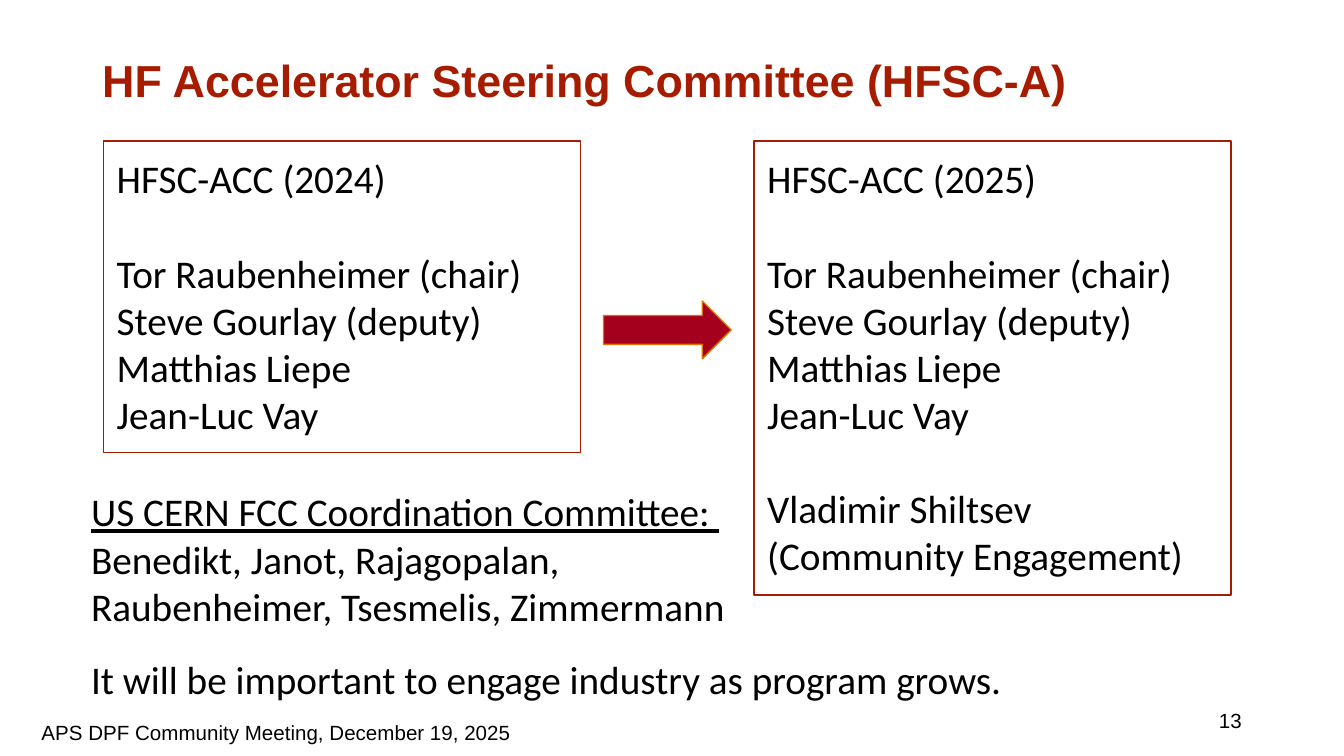
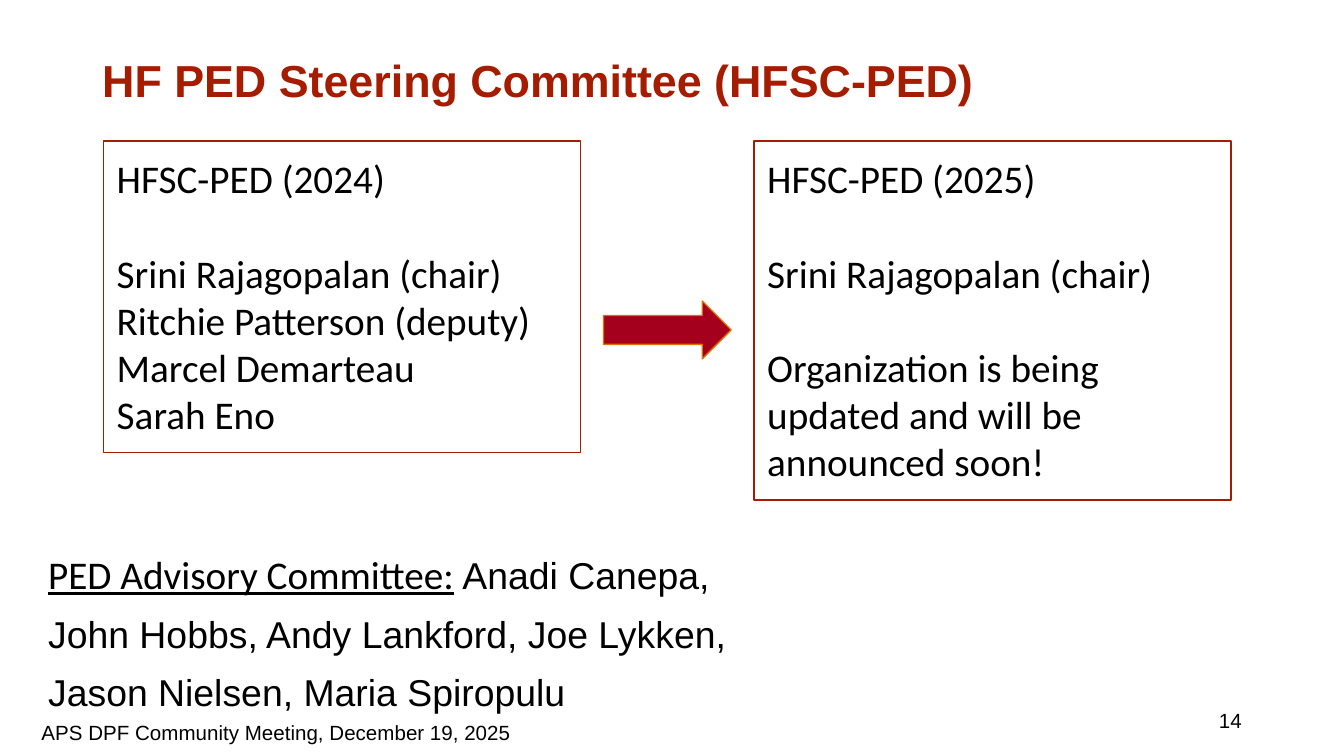
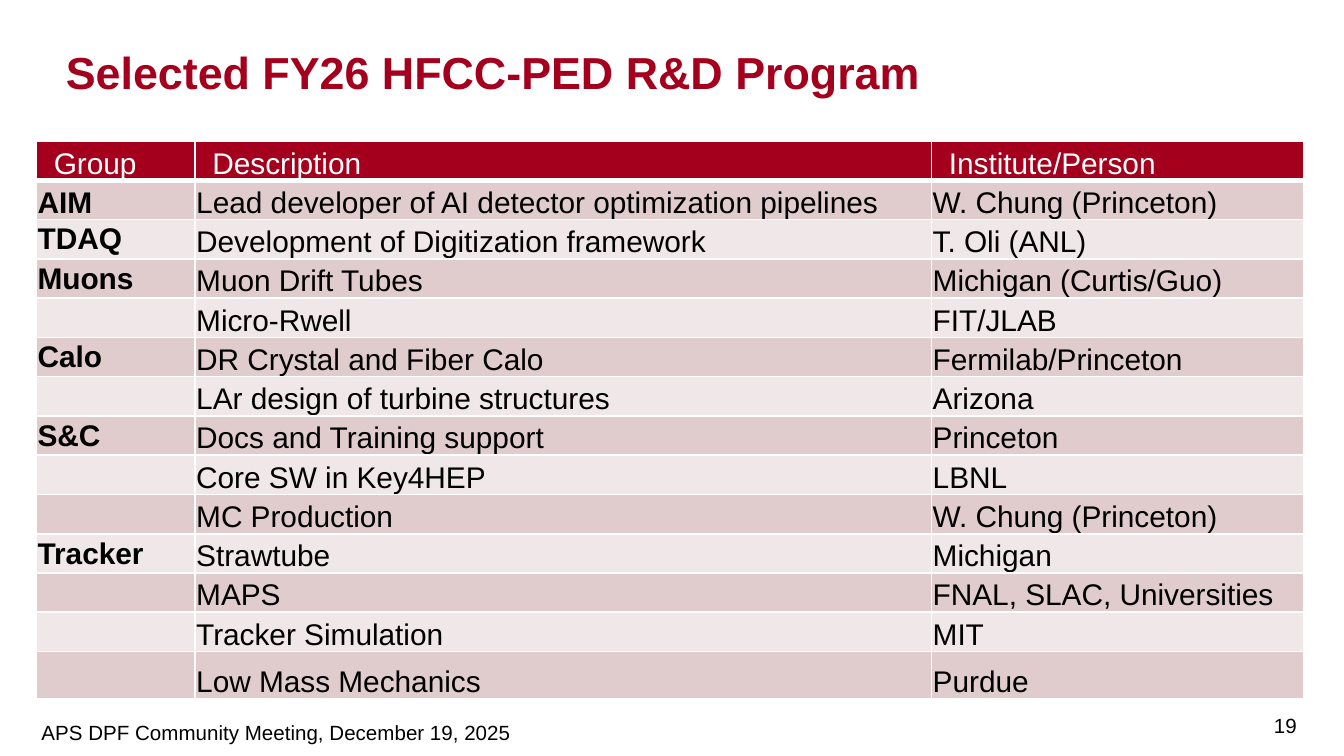
from dataclasses import dataclass

from lxml import etree
from pptx import Presentation
from pptx.dml.color import RGBColor
from pptx.enum.shapes import MSO_SHAPE
from pptx.enum.text import MSO_ANCHOR, MSO_AUTO_SIZE, PP_ALIGN
from pptx.oxml.ns import qn
from pptx.util import Emu, Inches, Pt

TOP, MIDDLE, BOTTOM = MSO_ANCHOR.TOP, MSO_ANCHOR.MIDDLE, MSO_ANCHOR.BOTTOM
LEFT, RIGHT = PP_ALIGN.LEFT, PP_ALIGN.RIGHT
RECTANGLE, RIGHT_ARROW = MSO_SHAPE.RECTANGLE, MSO_SHAPE.RIGHT_ARROW
NO_AUTOFIT = MSO_AUTO_SIZE.NONE
TITLE_ONLY = 5


@dataclass(frozen=True)
class Theme:
    brick: str = "A61C00"
    crimson: str = "A4001D"
    orange: str = "E17000"
    black: str = "000000"
    white: str = "FFFFFF"
    bands: tuple = ("E0CCCD", "F0E7E8")
    sans: str = "Arial"
    body: str = "Calibri"
    title_size: float = 24
    body_size: float = 21
    names_size: float = 20
    table_size: float = 16
    footer_size: float = 11
    line_width: float = 0.75


THEME = Theme()

# The grid has square cells, 100 columns across the slide
CELL = 0.1
LINE_ROWS = 3.53


@dataclass(frozen=True)
class Box:
    """A region in grid columns and rows."""
    left: float
    top: float
    width: float
    height: float

    def within(self, left, top, width, height):
        return Box(self.left + left, self.top + top, width, height)

    def emu(self):
        return [grid(n) for n in (self.left, self.top, self.width, self.height)]


TITLE = Box(6.9, 0.5, 86.2, 10.9)
TABLE_TITLE = Box(4.9, 1.1, 88.6, 6.2)
FOOTER = Box(2.1, 53.1, 60.2, 3.4)
NUMBER = Box(70.6, 52.1, 22.5, 3)
TABLE_NUMBER = Box(90.6, 51.8, 6.6, 4.4)
COMMITTEES = Box(7.7, 10.5, 83.9, 33.8)
TABLE = Box(2.7, 10.5, 94.3, 41.5)


def grid(cells):
    return Emu(Inches(cells * CELL))


def color(value):
    return RGBColor.from_string(value)


def style(font, name, size, ink, bold=False):
    font.name, font.size, font.bold = name, Pt(size), bold
    font.color.rgb = color(ink)


def set_frame(frame, insets=(0.1, 0.1), anchor=TOP):
    """Insets are horizontal and vertical, in inches."""
    frame.word_wrap = True
    frame.auto_size = NO_AUTOFIT
    frame.vertical_anchor = anchor
    frame.margin_left = frame.margin_right = Inches(insets[0])
    frame.margin_top = frame.margin_bottom = Inches(insets[1])


def add_text(page, box, insets=(0.1, 0.1), anchor=TOP):
    frame = page.shapes.add_textbox(*box.emu()).text_frame
    set_frame(frame, insets, anchor)
    return frame.paragraphs[0]


def add_small(page, box, text, insets, anchor=TOP, align=LEFT):
    para = add_text(page, box, insets, anchor)
    para.text, para.alignment = text, align
    style(para.font, THEME.sans, THEME.footer_size, THEME.black)


def add_page(deck, title, number, box=TITLE, ink=THEME.brick, insets=(0.07, 0.04),
             anchor=MIDDLE, number_box=NUMBER):
    """Start a slide with its title, footer and number."""
    page = deck.slides.add_slide(deck.slide_layouts[TITLE_ONLY])
    heading = page.shapes.title
    heading.left, heading.top, heading.width, heading.height = box.emu()
    set_frame(heading.text_frame, insets, anchor)
    para = heading.text_frame.paragraphs[0]
    para.text, para.alignment = title, LEFT
    style(para.font, THEME.sans, THEME.title_size, ink, bold=True)
    add_small(page, FOOTER, "APS DPF Community Meeting, December 19, 2025", (0.1, 0.05))
    add_small(page, number_box, number, (0.07, 0.04), MIDDLE, RIGHT)
    return page


def add_outline(page, preset, box, line):
    shape = page.shapes.add_shape(preset, *box.emu())
    shape.shadow.inherit = False
    shape.fill.background()
    shape.line.color.rgb = color(line)
    shape.line.width = Pt(THEME.line_width)
    return shape


def add_panel(page, box, groups):
    """Framed list; each group after the first stands one line apart."""
    frame = add_outline(page, RECTANGLE, box, THEME.brick).text_frame
    set_frame(frame)
    para = None
    for group in groups:
        for index, text in enumerate(group):
            starts_group = para is not None and index == 0
            para = frame.add_paragraph() if para is not None else frame.paragraphs[0]
            para.text, para.alignment = text, LEFT
            if starts_group:
                para.space_before = Pt(LINE_ROWS * CELL * 72)
            style(para.font, THEME.body, THEME.body_size, THEME.black)


def add_committees(page, area, before, after, after_lines):
    """Two panels, with an arrow from last year's to this year's."""
    panel, arrow = 35.5, 9.5
    before_lines = sum(map(len, before)) + len(before) - 1
    for left, groups, lines in ((0, before, before_lines),
                                (area.width - panel, after, after_lines)):
        add_panel(page, area.within(left, 0, panel, 2 + lines * LINE_ROWS), groups)
    box = area.within((area.width - arrow) / 2, 11.9, arrow, 4.3)
    shape = add_outline(page, RIGHT_ARROW, box, THEME.orange)
    shape.fill.solid()
    shape.fill.fore_color.rgb = color(THEME.crimson)


def add_note(page, box, heading, lines, font=THEME.body, size=THEME.body_size, spacing=1.0):
    """Underlined heading, then lines parted by line breaks."""
    para = add_text(page, box)
    para.line_spacing = spacing
    if heading:
        span = para.add_run()
        span.text = heading
        style(span.font, THEME.body, THEME.body_size, THEME.black)
        span.font.underline = True
    for index, line in enumerate(lines):
        if index:
            para.add_line_break()
        if line:
            span = para.add_run()
            span.text = line
            style(span.font, font, size, THEME.black)


def set_borders(cell, widths):
    properties = cell._tc.get_or_add_tcPr()
    for side, width in zip(("lnL", "lnR", "lnT", "lnB"), widths):
        line = etree.SubElement(properties, qn(f"a:{side}"), w=str(Pt(width)))
        fill = etree.SubElement(line, qn("a:solidFill"))
        etree.SubElement(fill, qn("a:srgbClr"), val=THEME.white)


def add_program(page, box, columns, rows):
    """Banded table whose last row is a little taller."""
    table = page.shapes.add_table(len(rows), len(columns), *box.emu()).table
    table.horz_banding = False
    for column, width in zip(table.columns, columns):
        column.width = grid(width)
    last_row = 3.5
    for row in table.rows:
        row.height = grid((box.height - last_row) / (len(rows) - 1))
    table.rows[len(rows) - 1].height = grid(last_row)

    for row, texts in enumerate(rows):
        header = row == 0
        for column, text in enumerate(texts):
            cell = table.cell(row, column)
            group = column == 0 and not header
            cell.margin_left = Inches(0.13 if header else 0.01)
            cell.margin_right = Inches(0.01)
            cell.margin_top = 0
            cell.margin_bottom = Inches(0.02 if group and text and row > 1 else 0)
            cell.vertical_anchor = BOTTOM
            set_borders(cell, (1, 1, 1, 3 if header else 1))
            cell.fill.solid()
            cell.fill.fore_color.rgb = color(THEME.crimson if header else THEME.bands[(row - 1) % 2])
            para = cell.text_frame.paragraphs[0]
            para.text = text
            style(para.font, THEME.sans, THEME.table_size,
                  THEME.white if header else THEME.black, bold=group)


def accelerator_slide(deck):
    page = add_page(deck, "HF Accelerator Steering Committee (HFSC-A)", "13")
    members = ["Tor Raubenheimer (chair)", "Steve Gourlay (deputy)", "Matthias Liepe", "Jean-Luc Vay"]
    add_committees(page, COMMITTEES,
                   [["HFSC-ACC (2024)"], members],
                   [["HFSC-ACC (2025)"], members, ["Vladimir Shiltsev (Community Engagement)"]],
                   after_lines=9)
    add_note(page, Box(5.8, 35.3, 92.6, 12.6), "US CERN FCC Coordination Committee: ",
             ["", "Benedikt, Janot, Rajagopalan,", "Raubenheimer, Tsesmelis, Zimmermann"])
    add_note(page, Box(5.8, 47.8, 92.6, 5.6), "",
             ["It will be important to engage industry as program grows."])


def detector_slide(deck):
    page = add_page(deck, "HF PED Steering Committee (HFSC-PED)", "14")
    add_committees(page, COMMITTEES,
                   [["HFSC-PED (2024)"],
                    ["Srini Rajagopalan (chair)", "Ritchie Patterson (deputy)",
                     "Marcel Demarteau", "Sarah Eno"]],
                   [["HFSC-PED (2025)"], ["Srini Rajagopalan (chair)"],
                    ["Organization is being updated and will be announced soon!"]],
                   after_lines=7)
    add_note(page, Box(2.6, 38.9, 57.4, 17), "PED Advisory Committee:",
             [" Anadi Canepa,",
              "John Hobbs, Andy Lankford, Joe Lykken, Jason Nielsen, Maria Spiropulu"],
             THEME.sans, THEME.names_size, 1.3)


def program_slide(deck):
    page = add_page(deck, "Selected FY26 HFCC-PED R&D Program", "19", TABLE_TITLE,
                    THEME.crimson, (0, 0), BOTTOM, TABLE_NUMBER)
    add_program(page, TABLE, (11.8, 54.8, 27.7), [
        ("Group", "Description", "Institute/Person"),
        ("AIM", "Lead developer of AI detector optimization pipelines", "W. Chung (Princeton)"),
        ("TDAQ", "Development of Digitization framework", "T. Oli (ANL)"),
        ("Muons", "Muon Drift Tubes", "Michigan (Curtis/Guo)"),
        ("", "Micro-Rwell", "FIT/JLAB"),
        ("Calo", "DR Crystal and Fiber Calo", "Fermilab/Princeton"),
        ("", "LAr design of turbine structures", "Arizona"),
        ("S&C", "Docs and Training support", "Princeton"),
        ("", "Core SW in Key4HEP", "LBNL"),
        ("", "MC Production", "W. Chung (Princeton)"),
        ("Tracker", "Strawtube", "Michigan"),
        ("", "MAPS", "FNAL, SLAC, Universities"),
        ("", "Tracker Simulation", "MIT"),
        ("", "Low Mass Mechanics", "Purdue"),
    ])


def main():
    deck = Presentation()
    deck.slide_width, deck.slide_height = grid(100), grid(56.25)
    accelerator_slide(deck)
    detector_slide(deck)
    program_slide(deck)
    deck.save("out.pptx")


if __name__ == "__main__":
    main()
